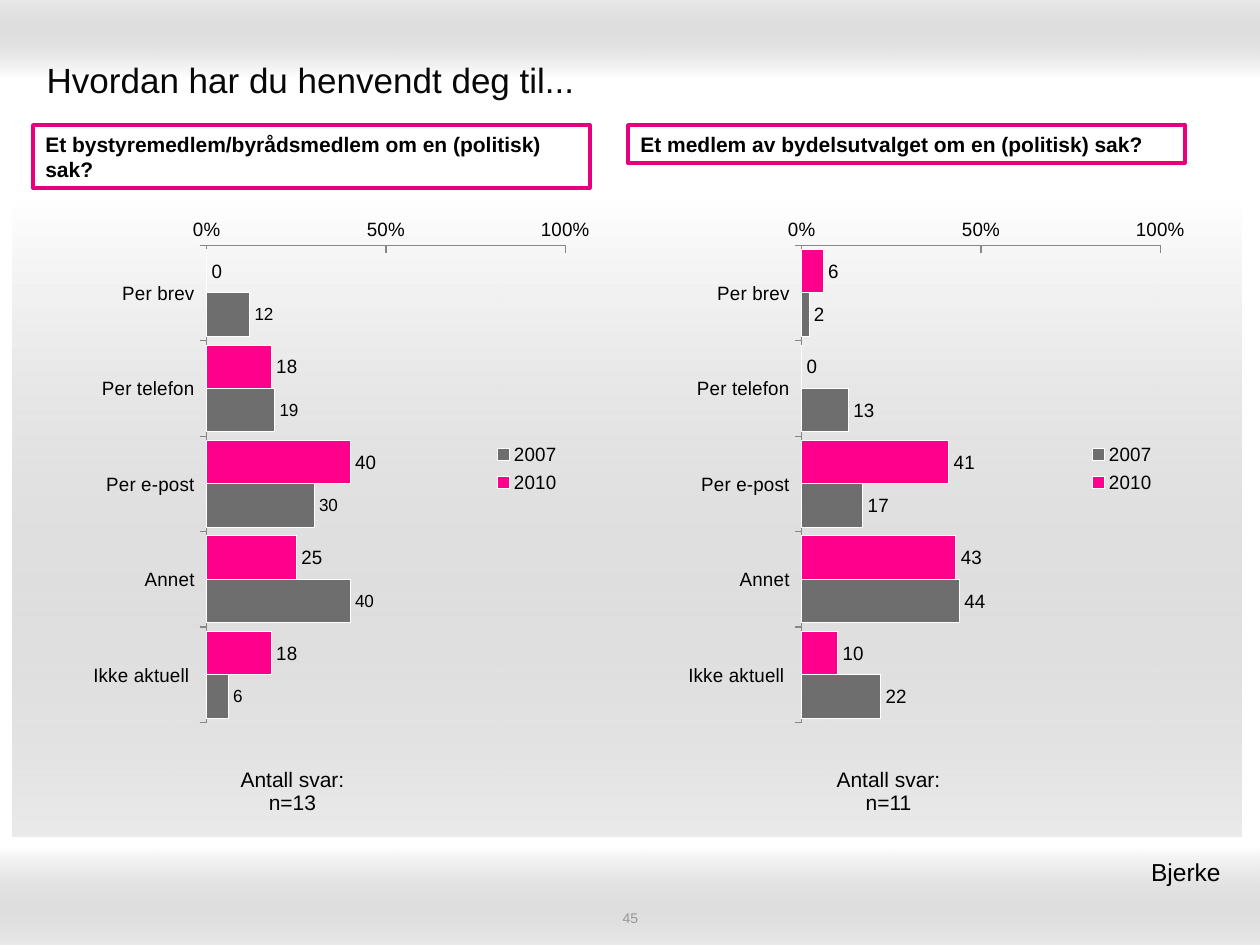
from lxml import etree
from pptx import Presentation
from pptx.chart.data import CategoryChartData
from pptx.dml.color import RGBColor
from pptx.enum.chart import XL_CHART_TYPE, XL_LABEL_POSITION, XL_LEGEND_POSITION, XL_TICK_MARK
from pptx.enum.shapes import MSO_SHAPE
from pptx.enum.text import MSO_ANCHOR, MSO_AUTO_SIZE, PP_ALIGN
from pptx.oxml import parse_xml
from pptx.oxml.ns import nsdecls, qn
from pptx.util import Pt

SCALE = 914400 / 126
FONT = "Arial"
TITLE = "Hvordan har du henvendt deg til..."
DISTRICT = "Bjerke "
PAGE_NUMBER = "45"
CATEGORIES = ["Per brev", "Per telefon", "Per e-post", "Annet", "Ikke aktuell "]
SERIES_COLORS = {"2010": "FF008C", "2007": "6E6E6E"}
PANELS = [
    {
        "left": 33, "header_height": 63, "table_left": 203,
        "question": "Et bystyremedlem/byrådsmedlem om en (politisk) sak?",
        "answers": "Antall svar: n=13",
        "values": {"2010": [0, 18, 40, 25, 18], "2007": [12, 19, 30, 40, 6]},
        "label_sizes": {"2010": 11, "2007": 10},
    },
    {
        "left": 628, "header_height": 38, "table_left": 799,
        "question": "Et medlem av bydelsutvalget om en (politisk) sak?",
        "answers": "Antall svar: n=11",
        "values": {"2010": [6, 0, 41, 43, 10], "2007": [2, 13, 17, 44, 22]},
        "label_sizes": {"2010": 11, "2007": 11},
    },
]
PANEL_WIDTH = 557
# Left, top, width, height, gradient angle
BANDS = [(0, 0, 1260, 78, 270), (0, 847, 1260, 98, 90), (13, 197, 1228, 640, 90)]
PLOT_LAYOUT = {"x": 0.32, "y": 0.07, "w": 0.66, "h": 0.92}
LEGEND_LAYOUT = {"x": 0.84, "y": 0.44, "w": 0.14, "h": 0.12}


def px(*lengths):
    return [round(length * SCALE) for length in lengths]


def color(value):
    return RGBColor.from_string(value)


def style_font(font, size, fill="000000", bold=False):
    font.name, font.size, font.bold = FONT, Pt(size), bold
    font.color.rgb = color(fill)


def write(frame, text, size, fill="000000", bold=False, align=PP_ALIGN.LEFT,
          anchor=MSO_ANCHOR.TOP, inset=None):
    frame.word_wrap = True
    frame.auto_size = MSO_AUTO_SIZE.NONE
    frame.vertical_anchor = anchor
    if inset is not None:
        frame.margin_left = frame.margin_right = inset
        frame.margin_top = frame.margin_bottom = inset
    paragraph = frame.paragraphs[0]
    paragraph.alignment = align
    run = paragraph.add_run()
    run.text = text
    style_font(run.font, size, fill, bold)


def add_band(slide, left, top, width, height, angle):
    shape = slide.shapes.add_shape(MSO_SHAPE.RECTANGLE, *px(left, top, width, height))
    shape.shadow.inherit = False
    shape.line.fill.background()
    gradient = parse_xml(
        f'<a:gradFill {nsdecls("a")} rotWithShape="1"><a:gsLst>'
        '<a:gs pos="0"><a:srgbClr val="FFFFFF"/></a:gs>'
        '<a:gs pos="100000"><a:srgbClr val="999999"><a:alpha val="20000"/></a:srgbClr></a:gs>'
        f'</a:gsLst><a:lin ang="{angle * 60000}" scaled="1"/></a:gradFill>')
    shape._element.spPr.find(qn("a:prstGeom")).addnext(gradient)


def set_layout(parent, after, layout, inner=False):
    for old in parent.findall(qn("c:layout")):
        parent.remove(old)
    element = etree.Element(qn("c:layout"))
    manual = etree.SubElement(element, qn("c:manualLayout"))
    if inner:
        etree.SubElement(manual, qn("c:layoutTarget")).set("val", "inner")
    for name in "xy":
        etree.SubElement(manual, qn(f"c:{name}Mode")).set("val", "edge")
    for name, value in layout.items():
        etree.SubElement(manual, qn(f"c:{name}")).set("val", str(value))
    if after is None:
        parent.insert(0, element)
    else:
        after.addnext(element)


def add_header(slide, panel):
    shape = slide.shapes.add_shape(
        MSO_SHAPE.RECTANGLE, *px(panel["left"], 125, PANEL_WIDTH, panel["header_height"]))
    shape.shadow.inherit = False
    shape.fill.solid()
    shape.fill.fore_color.rgb = color("FFFFFF")
    shape.line.color.rgb = color("E7007E")
    shape.line.width = Pt(2)
    write(shape.text_frame, panel["question"], 12, bold=True)


def add_bar_chart(slide, panel):
    data = CategoryChartData()
    data.categories = CATEGORIES
    for name, values in panel["values"].items():
        data.add_series(name, values)
    chart = slide.shapes.add_chart(
        XL_CHART_TYPE.BAR_CLUSTERED, *px(panel["left"], 209, PANEL_WIDTH, 519), data).chart
    chart.has_title = False
    style_font(chart.font, 11)

    # Axes
    for axis in (chart.category_axis, chart.value_axis):
        axis.major_tick_mark = XL_TICK_MARK.OUTSIDE
        axis.minor_tick_mark = XL_TICK_MARK.NONE
        axis.has_major_gridlines = False
        axis.format.line.color.rgb = color("868686")
    chart.category_axis.reverse_order = True
    value_axis = chart.value_axis
    value_axis.major_tick_mark = XL_TICK_MARK.INSIDE
    value_axis.minimum_scale, value_axis.maximum_scale = 0, 100
    value_axis.major_unit = 50
    value_axis.tick_labels.number_format = r"General\%"
    value_axis.tick_labels.number_format_is_linked = False

    # Bars and their labels
    plot = chart.plots[0]
    plot.gap_width, plot.overlap = 20, 0
    plot.vary_by_categories = False
    for series in plot.series:
        series.format.fill.solid()
        series.format.fill.fore_color.rgb = color(SERIES_COLORS[series.name])
        series.format.line.color.rgb = color("FFFFFF")
        labels = series.data_labels
        labels.show_value = True
        labels.number_format = "0"
        labels.number_format_is_linked = False
        labels.position = XL_LABEL_POSITION.OUTSIDE_END
        style_font(labels.font, panel["label_sizes"][series.name])

    # Legend and plot placement
    chart.has_legend = True
    chart.legend.position = XL_LEGEND_POSITION.RIGHT
    chart.legend.include_in_layout = False
    style_font(chart.legend.font, 11)
    legend = chart.legend._element
    set_layout(legend, legend.find(qn("c:legendPos")), LEGEND_LAYOUT)
    set_layout(chart._chartSpace.chart.plotArea, None, PLOT_LAYOUT, inner=True)


def add_answer_table(slide, panel):
    table = slide.shapes.add_table(1, 1, *px(panel["table_left"], 760, 179, 63)).table
    table.first_row = table.horz_banding = False
    cell = table.cell(0, 0)
    cell.fill.background()
    cell.vertical_anchor = MSO_ANCHOR.MIDDLE
    paragraph = cell.text_frame.paragraphs[0]
    paragraph.alignment = PP_ALIGN.CENTER
    run = paragraph.add_run()
    run.text = panel["answers"]
    style_font(run.font, 12)
    for side in ("lnL", "lnR", "lnT", "lnB"):
        border = parse_xml(f'<a:{side} {nsdecls("a")} w="0"><a:noFill/></a:{side}>')
        cell._tc.tcPr.find(qn("a:noFill")).addprevious(border)


def main():
    presentation = Presentation()
    presentation.slide_width, presentation.slide_height = px(1260, 945)
    slide = presentation.slides.add_slide(presentation.slide_layouts[5])

    # Background bands
    for band in BANDS:
        add_band(slide, *band)

    # Title, brought in front of the bands
    title = slide.shapes.title
    slide.shapes._spTree.append(title._element)
    title.left, title.top, title.width, title.height = px(34, 45, 1191, 69)
    write(title.text_frame, TITLE, 20, fill="080808", anchor=MSO_ANCHOR.MIDDLE)

    # Question panels
    for panel in PANELS:
        add_header(slide, panel)
        add_bar_chart(slide, panel)
        add_answer_table(slide, panel)

    # Footer
    district = slide.shapes.add_textbox(*px(769, 851, 471, 43))
    write(district.text_frame, DISTRICT, 14, align=PP_ALIGN.RIGHT)
    number = slide.shapes.add_textbox(*px(431, 909, 399, 18))
    write(number.text_frame, PAGE_NUMBER, 8, fill="969696", align=PP_ALIGN.CENTER,
          anchor=MSO_ANCHOR.MIDDLE, inset=0)

    presentation.save("out.pptx")


if __name__ == "__main__":
    main()
